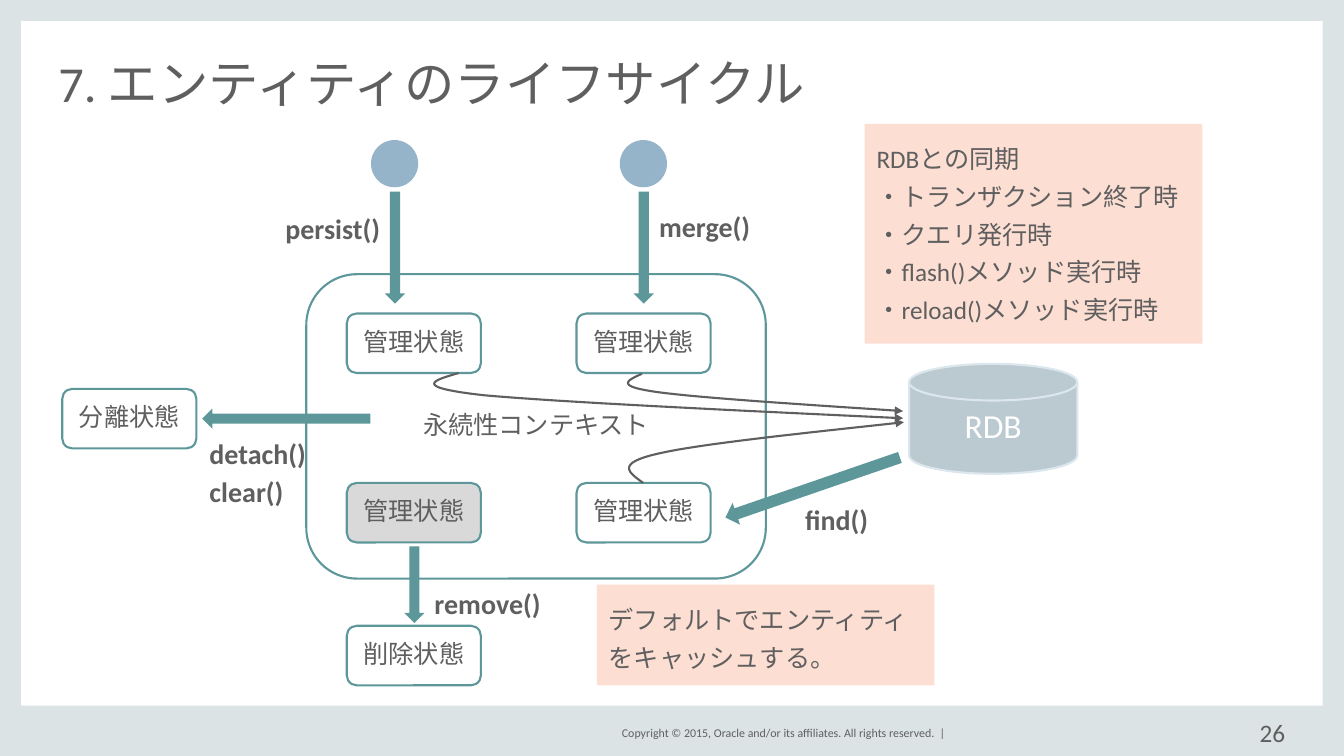
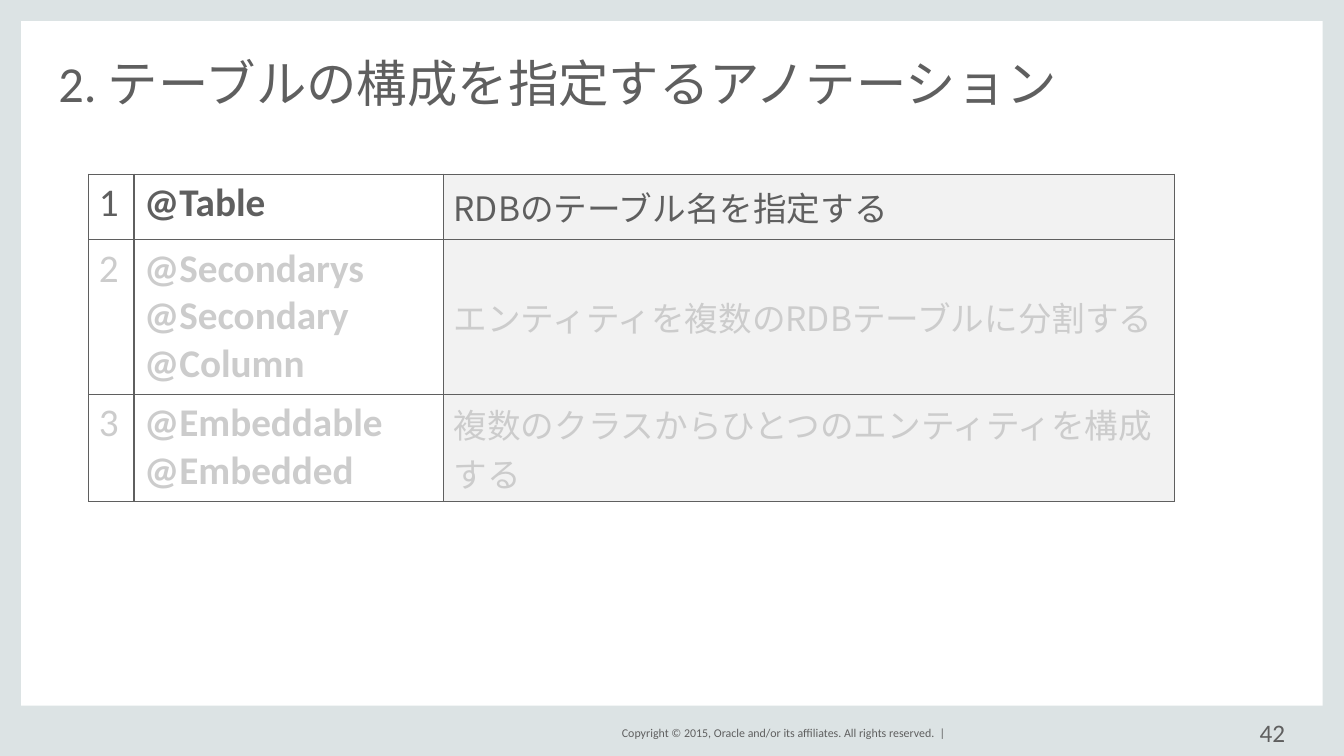
"""Build two slides on the entity life cycle and its table annotations."""
from lxml.etree import SubElement
from pptx import Presentation
from pptx.dml.color import RGBColor
from pptx.enum.shapes import MSO_SHAPE
from pptx.enum.text import MSO_ANCHOR, PP_ALIGN
from pptx.oxml.ns import qn
from pptx.util import Cm, Pt

GRAY = RGBColor(0x5F, 0x5F, 0x5F)
FADED = RGBColor(0xCC, 0xCC, 0xCC)
WHITE = RGBColor(0xFF, 0xFF, 0xFF)
BAND = RGBColor(0xDC, 0xE3, 0xE4)
TEAL = RGBColor(0x5D, 0x97, 0x9A)
BLUE = RGBColor(0x96, 0xB4, 0xC9)
STEEL = RGBColor(0xBB, 0xCA, 0xD0)
RIM = RGBColor(0xDC, 0xE6, 0xED)
PEACH = RGBColor(0xFC, 0xDE, 0xD3)
SILVER = RGBColor(0xD9, 0xD9, 0xD9)
PALE = RGBColor(0xF2, 0xF2, 0xF2)
LATIN = "Calibri"
KANJI = "Noto Sans CJK JP"
ROUND = MSO_SHAPE.ROUNDED_RECTANGLE
RECT = MSO_SHAPE.RECTANGLE
DOWN = MSO_SHAPE.DOWN_ARROW


def write(frame, text, size=18, color=GRAY, font=LATIN, bold=False,
          align=PP_ALIGN.LEFT, space=None):
    """Fill a text frame, one paragraph a line."""
    frame.text = text
    for para in frame.paragraphs:
        para.alignment = align
        if space:
            para.line_spacing = space
        for run in para.runs:
            run.font.size = Pt(size)
            run.font.bold = bold
            run.font.name = font
            run.font.color.rgb = color
            SubElement(run.font._element, qn("a:ea"), typeface=font)


def box(slide, kind, place, fill=None, line=None, text="", inset=0.0,
        anchor=MSO_ANCHOR.TOP, turn=0, **style):
    """Add a shape, or a text box when kind is None, placed in cm."""
    spot = [Cm(n) for n in place]
    if kind is None:
        shape = slide.shapes.add_textbox(*spot)
    else:
        shape = slide.shapes.add_shape(kind, *spot)
        shape.shadow.inherit = False
    shape.rotation = turn
    if fill is None:
        shape.fill.background()
    else:
        shape.fill.solid()
        shape.fill.fore_color.rgb = fill
    if line is None:
        shape.line.fill.background()
    else:
        shape.line.color.rgb = line
        shape.line.width = Pt(1.5)
    if text:
        frame = shape.text_frame
        frame.word_wrap = True
        frame.vertical_anchor = anchor
        frame.margin_left = frame.margin_right = Cm(inset)
        frame.margin_top = frame.margin_bottom = Cm(inset)
        write(frame, text, **style)
    return shape


deck = Presentation()
deck.slide_width, deck.slide_height = Cm(33.87), Cm(19.05)
layout = deck.slide_layouts[5]
for spare in list(layout.placeholders)[1:]:
    spare.element.getparent().remove(spare.element)
head = layout.placeholders[0]
head.left, head.top, head.width, head.height = Cm(1.47), Cm(1.04), Cm(30.91), Cm(1.78)

pages = (("7. エンティティのライフサイクル", "26"),
         ("2. テーブルの構成を指定するアノテーション", "42"))
slides = [deck.slides.add_slide(layout) for page in pages]
life, notes = slides

shared = [box(life, RECT, place, BAND) for place in (
    (0, 0, 0.53, 19.05), (33.33, 0, 0.54, 19.05),
    (0, 17.78, 33.87, 1.27), (0, 0, 33.87, 0.53))]
shared.append(box(
    life, None, (14.94, 18.21, 8.89, 0.51), size=8.5, align=PP_ALIGN.RIGHT,
    anchor=MSO_ANCHOR.MIDDLE,
    text="Copyright © 2015, Oracle and/or its affiliates. All rights reserved.  |"))
for shape in shared:
    layout.shapes.element.append(shape.element)

for slide, (title, number) in zip(slides, pages):
    frame = slide.shapes.title.text_frame
    frame.vertical_anchor = MSO_ANCHOR.BOTTOM
    frame.margin_left = frame.margin_right = 0
    frame.margin_top = frame.margin_bottom = 0
    write(frame, title, size=36, space=0.8)
    box(slide, None, (31.32, 18.21, 1.07, 0.51), text=number,
        align=PP_ALIGN.RIGHT, anchor=MSO_ANCHOR.MIDDLE)

middle = dict(anchor=MSO_ANCHOR.MIDDLE, align=PP_ALIGN.CENTER, space=0.9)
box(life, ROUND, (7.72, 6.91, 11.58, 7.67), WHITE, TEAL,
    "永続性コンテキスト", font=KANJI, **middle)
for left, top, fill, state in (
        (8.74, 7.9, None, "管理状態"), (14.53, 7.9, None, "管理状態"),
        (8.74, 12.17, SILVER, "管理状態"), (14.53, 12.17, None, "管理状態"),
        (8.74, 15.77, None, "削除状態"), (1.57, 9.8, None, "分離状態")):
    box(life, ROUND, (left, top, 3.38, 1.5), fill, TEAL, state, font=KANJI, **middle)

for left in (9.35, 15.62):
    box(life, MSO_SHAPE.OVAL, (left, 3.53, 1.19, 1.19), BLUE)
    box(life, DOWN, (left + 0.35, 4.83, 0.51, 2.82), TEAL)
box(life, MSO_SHAPE.CAN, (22.91, 9.17, 4.24, 2.77), STEEL, RIM, "RDB",
    size=24, color=WHITE, **middle).element.spPr.prstGeom.set(
        "prst", "flowChartMagneticDisk")
for place, turn in (((20.19, 9.96, 0.58, 4.65), 71),
                    ((10.19, 13.77, 0.51, 1.93), 0),
                    ((6.96, 8.43, 0.51, 4.24), 90)):
    box(life, DOWN, place, TEAL, turn=turn)

for left, top, label in (
        (7.19, 5.23, "persist()"), (16.61, 5.18, "merge()"),
        (20.29, 12.55, "find()"), (10.95, 14.68, "remove()"),
        (5.28, 10.9, "detach()\nclear()")):
    box(life, None, (left, top, 2.97, 1.02 * len(label.split("\n"))),
        text=label, size=20, bold=True, space=Pt(27))

curves = (
    ((16.18, 9.42), (15.82, 9.58), (15.47, 9.73), (16.56, 9.88),
     (17.65, 10.03), (20.19, 10.19), (22.76, 10.36)),
    ((16.21, 12.17), (15.85, 11.91), (15.49, 11.68), (16.59, 11.43),
     (17.68, 11.18), (20.22, 10.92), (22.78, 10.64)),
    ((11.56, 9.4), (10.95, 9.58), (10.31, 9.75), (12.19, 9.96),
     (14.05, 10.13), (18.42, 10.34), (22.76, 10.54)))
STEPS = 16
for knots in curves:
    points = []
    for first in (0, 3):
        bend = knots[first:first + 4]
        for step in range(1, STEPS + 1):
            t = step / STEPS
            parts = ((1 - t) ** 3, 3 * t * (1 - t) ** 2, 3 * t * t * (1 - t), t ** 3)
            points.append([Cm(sum(w * knot[axis] for w, knot in zip(parts, bend)))
                           for axis in (0, 1)])
    start = [Cm(n) for n in knots[0]]
    pen = life.shapes.build_freeform(*start)
    pen.add_line_segments(points, close=False)
    curve = pen.convert_to_shape()
    curve.shadow.inherit = False
    curve.fill.background()
    curve.line.color.rgb = GRAY
    curve.line.width = Pt(1.5)
    SubElement(curve.line._get_or_add_ln(), qn("a:tailEnd"), type="triangle")

for place, text in (
        ((21.79, 3.12, 8.51, 5.54),
         "RDBとの同期\n・トランザクション終了時\n・クエリ発行時\n"
         "・flash()メソッド実行時\n・reload()メソッド実行時"),
        ((15.04, 14.73, 8.51, 2.54), "デフォルトでエンティティをキャッシュする。")):
    box(life, RECT, place, PEACH, text=text, inset=0.3, space=Pt(27))

rows = (
    (1.65, GRAY, "@Table", "RDBのテーブル名を指定する"),
    (3.9, FADED, "@Secondarys\n@Secondary\n@Column",
     "エンティティを複数のRDBテーブルに分割する"),
    (2.7, FADED, "@Embeddable\n@Embedded",
     "複数のクラスからひとつのエンティティを構成する"))
grid = notes.shapes.add_table(3, 3, Cm(2.24), Cm(4.39), Cm(27.36), Cm(8.25)).table
grid.first_row = grid.horz_banding = False
for column, width in zip(grid.columns, (1.14, 7.8, 18.42)):
    column.width = Cm(width)
for r, (height, color, names, usage) in enumerate(rows):
    grid.rows[r].height = Cm(height)
    looks = ((str(r + 1), dict(size=28)),
             (names, dict(size=28, bold=True)),
             (usage, dict(size=24, font=KANJI)))
    for c, (text, style) in enumerate(looks):
        cell = grid.cell(r, c)
        for side in ("a:lnL", "a:lnR", "a:lnT", "a:lnB"):
            edge = SubElement(cell._tc.get_or_add_tcPr(), qn(side), w=str(Pt(1)))
            SubElement(SubElement(edge, qn("a:solidFill")), qn("a:srgbClr"), val=str(GRAY))
        cell.fill.solid()
        cell.fill.fore_color.rgb = PALE if c == 2 else WHITE
        cell.vertical_anchor = MSO_ANCHOR.MIDDLE if c == 2 else MSO_ANCHOR.TOP
        write(cell.text_frame, text, color=color, **style)

deck.save("out.pptx")
